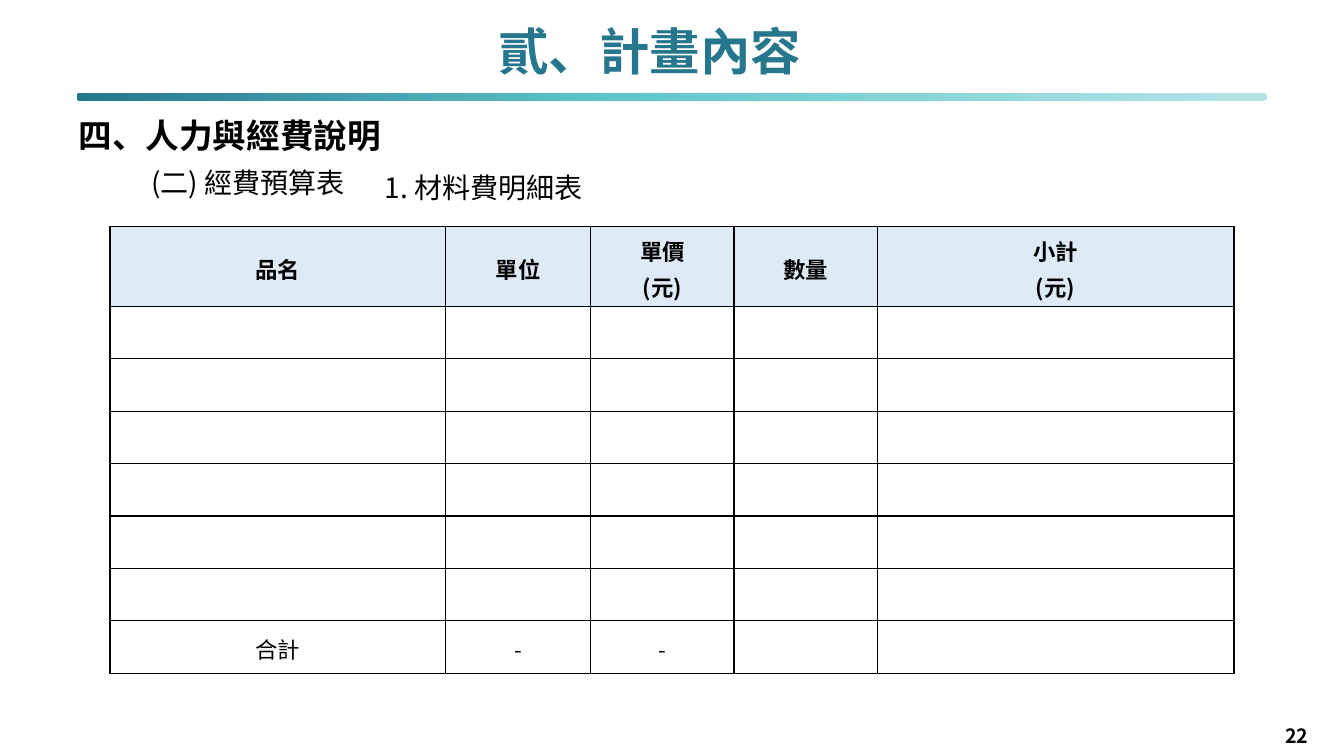
from lxml.etree import SubElement
from copy import deepcopy
from pptx import Presentation
from pptx.dml.color import RGBColor
from pptx.enum.shapes import MSO_SHAPE
from pptx.enum.text import MSO_ANCHOR, PP_ALIGN
from pptx.oxml.ns import qn
from pptx.util import Pt

PX = 9144
FONT = "Noto Sans CJK SC"
COLORS = {
    "ink": "000000",
    "title": "26768E",
    "mid": "61C7CB",
    "pale": "B1E3E5",
    "head": "DEEBF7",
}
HEADS = ["品名", "單位", "單價\n(元)", "數量", "小計\n(元)"]
TOTALS = ["合計", "-", "-", "", ""]
BLANKS = 6
WIDTHS = [333, 144, 142, 142, 354]
HEAD_H, ROW_H = 79, 52


def color(name):
    return RGBColor.from_string(COLORS[name])


def place(shape, *box):
    shape.left, shape.top, shape.width, shape.height = [n * PX for n in box]


def style(frame, size, bold=False, tint="ink", align=None, space=None):
    for para in frame.paragraphs:
        para.alignment = align
        para.line_spacing = space
        for run in para.runs:
            font = run.font
            font.size, font.bold, font.name = Pt(size), bold, FONT
            font.color.rgb = color(tint)
            SubElement(run._r.rPr, qn("a:ea")).set("typeface", FONT)


def add_title(slide, text):
    title = slide.shapes.title
    place(title, 483, 21, 323, 65)
    frame = title.text_frame
    frame.text = text
    frame.word_wrap = False
    frame.vertical_anchor = MSO_ANCHOR.BOTTOM
    style(frame, 36, True, "title", PP_ALIGN.CENTER, 0.9)


def add_bar(slide):
    bar = slide.shapes.add_shape(MSO_SHAPE.ROUNDED_RECTANGLE, 0, 0, 0, 0)
    place(bar, 76, 92, 1181, 8)
    bar.adjustments[0] = 0.5
    bar.shadow.inherit = False
    bar.line.fill.background()
    bar.fill.gradient()
    bar.fill.gradient_angle = 180
    stops = bar._element.spPr.find(qn("a:gradFill")).find(qn("a:gsLst"))
    stops.append(deepcopy(stops[-1]))
    tints = [("pale", 0.03), ("mid", 0.54), ("title", 1)]
    for stop, (name, spot) in zip(bar.fill.gradient_stops, tints):
        stop.color.rgb = color(name)
        stop.position = spot


def add_text(slide, text, box, size, indent=(0, 0), anchor=MSO_ANCHOR.TOP, **looks):
    shape = slide.shapes.add_textbox(0, 0, 0, 0)
    place(shape, *box)
    frame = shape.text_frame
    frame.text = text
    frame.word_wrap = True
    frame.vertical_anchor = anchor
    props = frame.paragraphs[0]._p.get_or_add_pPr()
    props.set("marL", str(indent[0] * PX))
    props.set("indent", str(indent[1] * PX))
    style(frame, size, **looks)


def add_edges(cell):
    props = cell._tc.get_or_add_tcPr()
    for side in ("lnL", "lnR", "lnT", "lnB"):
        line = SubElement(props, qn(f"a:{side}"), w=str(Pt(1)))
        fill = SubElement(line, qn("a:solidFill"))
        SubElement(fill, qn("a:srgbClr"), val=COLORS["ink"])


def fill_cell(cell, text, head):
    cell.text = text
    cell.vertical_anchor = MSO_ANCHOR.MIDDLE
    cell.margin_left = cell.margin_right = 7 * PX
    cell.margin_top = cell.margin_bottom = 0
    style(cell.text_frame, 16, head, align=PP_ALIGN.CENTER, space=Pt(26))
    add_edges(cell)
    if head:
        cell.fill.solid()
        cell.fill.fore_color.rgb = color("head")
    else:
        cell.fill.background()


def add_grid(slide):
    rows = [HEADS] + [[""] * len(HEADS)] * BLANKS + [TOTALS]
    frame = slide.shapes.add_table(len(rows), len(HEADS), 0, 0, 0, 0)
    place(frame, 109, 225, sum(WIDTHS), HEAD_H + ROW_H * (len(rows) - 1))
    table = frame.table
    table.horz_banding = False
    table.first_row = False
    for col, width in zip(table.columns, WIDTHS):
        col.width = width * PX
    for r, texts in enumerate(rows):
        table.rows[r].height = (ROW_H if r else HEAD_H) * PX
        for c, text in enumerate(texts):
            fill_cell(table.cell(r, c), text, r == 0)


def main():
    deck = Presentation()
    deck.slide_width, deck.slide_height = 1333 * PX, 750 * PX
    slide = deck.slides.add_slide(deck.slide_layouts[5])
    add_bar(slide)
    add_text(slide, "22", (1265, 713, 68, 37), 14, bold=True)
    add_title(slide, "貳、計畫內容")
    add_text(slide, "四、人力與經費說明", (68, 115, 831, 44), 24,
             anchor=MSO_ANCHOR.MIDDLE, bold=True, space=Pt(24))
    add_text(slide, "(二) 經費預算表", (100, 159, 876, 44), 20, indent=(40, 0))
    add_grid(slide)
    add_text(slide, "1. 材料費明細表", (353, 148, 980, 54), 20,
             indent=(85, -66), align=PP_ALIGN.JUSTIFY, space=1.5)
    deck.save("out.pptx")


if __name__ == "__main__":
    main()
